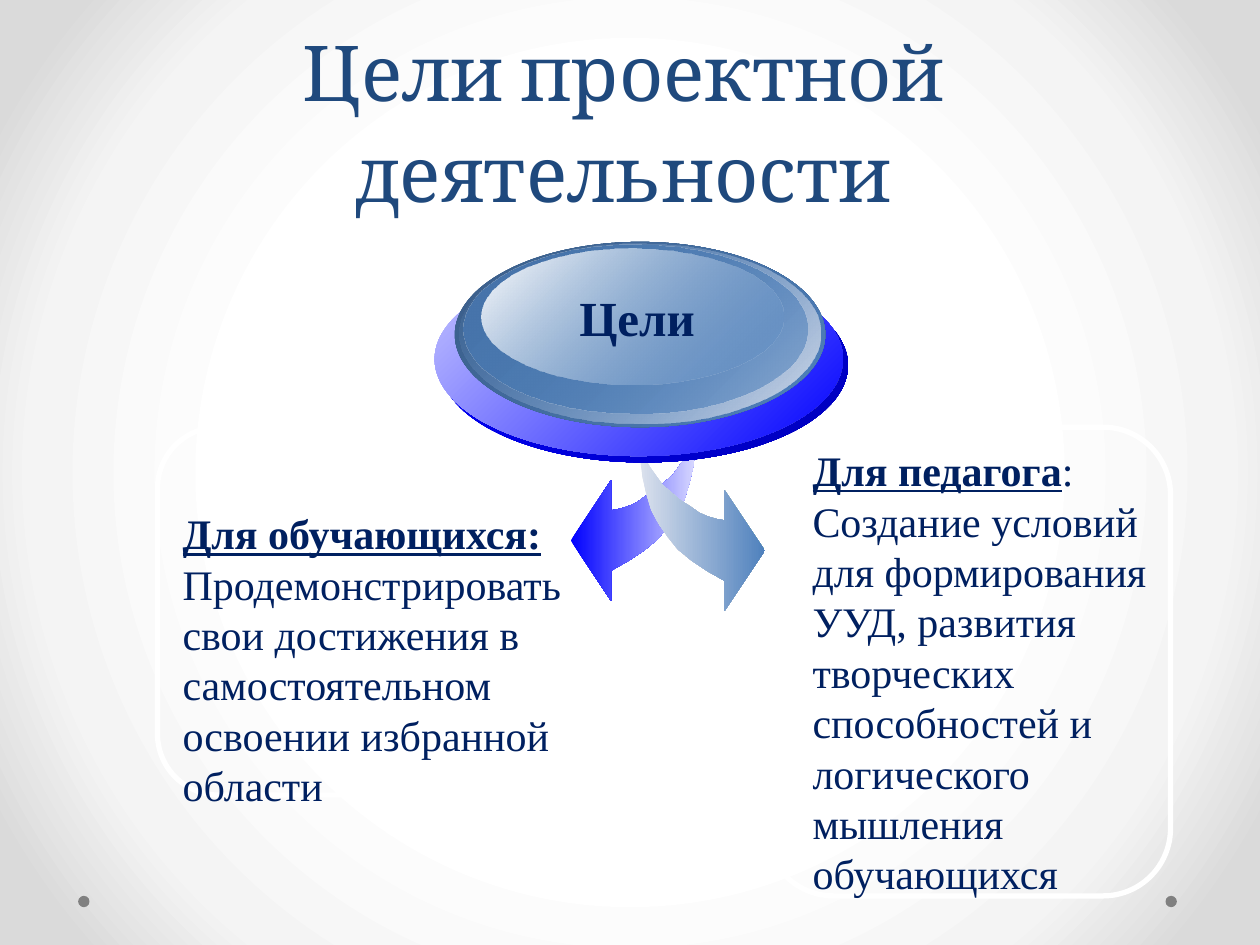
from lxml.etree import SubElement
from pptx import Presentation
from pptx.dml.color import RGBColor
from pptx.enum.shapes import MSO_SHAPE as Shape
from pptx.enum.text import MSO_ANCHOR as Anchor, MSO_AUTO_SIZE as AutoSize, PP_ALIGN as Align
from pptx.oxml import parse_xml
from pptx.oxml.ns import nsdecls, qn
from pptx.util import Inches, Pt

HEAD_FONT, BODY_FONT = "Cambria", "Times New Roman"
NAVY, STEEL, BLUE, WHITE = "002060", "4F81BD", "0000FF", "FFFFFF"

# Curved arrow pointing left, in hundredths of an inch
ARROW = [(552, 342), (552, 357), (550, 371), (547, 384), (543, 397), (537, 408),
         (530, 418), (522, 428), (511, 437), (499, 445), (485, 453), (485, 477),
         (453, 429), (485, 381), (485, 405), (491, 404), (498, 402), (505, 399),
         (512, 394), (520, 389), (527, 383), (534, 377), (539, 370), (544, 363),
         (548, 356), (551, 348)]
MIRROR_SUM, MIRROR_DROP = 1060, 8

# Layers of the button: box, then (colour, opacity) at both gradient ends
BUTTON = [
    ((3.49, 2.13, 3.24, 1.54), (BLUE, 100), ("0000BA", 100)),
    ((3.45, 2.08, 3.24, 1.54), ("C6C6FF", 100), (BLUE, 100)),
    ((3.61, 1.92, 2.94, 1.47), ("395C87", 100), (STEEL, 100)),
    ((3.65, 1.93, 2.86, 1.43), (STEEL, 0), ("D7DEEB", 100)),
    ((3.68, 1.94, 2.73, 1.34), ("4775AB", 100), (STEEL, 48)),
    ((3.82, 1.97, 2.40, 1.08), (WHITE, 100), (STEEL, 38)),
]


def color(value):
    return RGBColor.from_string(value)


def inches(box):
    return [Inches(length) for length in box]


class SlideBuilder:
    def __init__(self, page):
        self.page = page

    def background(self, stops):
        """Fill the page with a gradient that spreads from its centre."""
        marks = "".join(f'<a:gs pos="{place * 1000}"><a:srgbClr val="{value}"/></a:gs>'
                        for place, value in stops)
        self.page._element.cSld.insert(0, parse_xml(
            f'<p:bg {nsdecls("p", "a")}><p:bgPr><a:gradFill rotWithShape="1">'
            f'<a:gsLst>{marks}</a:gsLst><a:path path="circle">'
            '<a:fillToRect l="50000" t="50000" r="50000" b="50000"/></a:path>'
            '</a:gradFill><a:effectLst/></p:bgPr></p:bg>'))

    def gradient(self, shape, ends, angle=0):
        """Apply a linear gradient; the angle runs clockwise."""
        shape.shadow.inherit = False
        shape.line.fill.background()
        shape.fill.gradient()
        shape.fill.gradient_angle = 360 - angle
        for stop, (value, opacity) in zip(shape.fill.gradient_stops, ends):
            stop.color.rgb = color(value)
            if opacity < 100:
                alpha = SubElement(stop._gs.find(qn("a:srgbClr")), qn("a:alpha"))
                alpha.set("val", str(opacity * 1000))

    def title(self, text, box):
        title = self.page.shapes.title
        title.left, title.top, title.width, title.height = inches(box)
        frame = title.text_frame
        frame.text = text
        frame.word_wrap = True
        frame.auto_size = AutoSize.NONE
        frame.vertical_anchor = Anchor.BOTTOM
        para = frame.paragraphs[0]
        para.alignment = Align.CENTER
        para.line_spacing = Pt(58)
        self.style(para.font, 44, "1F497D", HEAD_FONT)

    def style(self, font, size, value, name=BODY_FONT):
        font.size, font.name = Pt(size), name
        font.color.rgb = color(value)

    def text(self, box, paragraphs, size=24, wrap=True):
        """Each paragraph is a list of (text, bold, underline) spans."""
        frame = self.page.shapes.add_textbox(*inches(box)).text_frame
        frame.word_wrap = wrap
        frame.auto_size = AutoSize.SHAPE_TO_FIT_TEXT
        for index, spans in enumerate(paragraphs):
            para = frame.add_paragraph() if index else frame.paragraphs[0]
            self.style(para.font, size, NAVY)
            for words, bold, underline in spans:
                span = para.add_run()
                span.text = words
                span.font.bold, span.font.underline = bold, underline

    def dot(self, left):
        dot = self.page.shapes.add_shape(Shape.OVAL, *inches((left, 7.11, 0.09, 0.09)))
        dot.shadow.inherit = False
        dot.fill.solid()
        dot.fill.fore_color.rgb = color("808080")
        dot.line.fill.background()

    def frame(self, box):
        frame = self.page.shapes.add_shape(Shape.ROUNDED_RECTANGLE, *inches(box))
        frame.shadow.inherit = False
        frame.fill.background()
        frame.line.color.rgb = color(WHITE)
        frame.line.width = Pt(3)

    def arrow(self, points, start, end):
        outline = self.page.shapes.build_freeform(*points[0], scale=Inches(0.01))
        outline.add_line_segments(points[1:], close=True)
        self.gradient(outline.convert_to_shape(), [(start, 100), (end, 100)])

    def button(self, layers):
        group = self.page.shapes.add_group_shape()
        for box, *ends in layers:
            self.gradient(group.shapes.add_shape(Shape.OVAL, *inches(box)), ends, 45)


def main():
    deck = Presentation()
    deck.slide_width, deck.slide_height = Inches(10), Inches(7.5)
    slide = SlideBuilder(deck.slides.add_slide(deck.slide_layouts[5]))

    slide.background([(50, WHITE), (76, "F4F4F4"), (92, "DADADA")])
    for left in (9.25, 0.62):
        slide.dot(left)
    slide.title("Цели проектной деятельности", (0.7, 0.53, 8.5, 1.25))

    slide.frame((6.08, 3.39, 3.21, 3.72))
    slide.frame((1.25, 3.39, 3.44, 2.92))
    slide.text((1.35, 3.98, 3.49, 2.52), [
        [("Для обучающихся:", True, True)],
        [("Продемонстрировать свои достижения в самостоятельном "
          "освоении избранной области", False, False)],
    ])

    slide.arrow(ARROW, BLUE, "D8D8FF")
    mirrored = [(MIRROR_SUM - x, y + MIRROR_DROP) for x, y in ARROW]
    slide.arrow(mirrored, "DBE1ED", STEEL)
    slide.button(BUTTON)
    slide.text((4.5, 2.23, 1.13, 0.57), [[("Цели", True, False)]], size=28, wrap=False)

    slide.text((6.35, 3.48, 3.18, 3.74), [
        [("Для педагога", True, True), (":", False, False)],
        [("Создание условий для формирования УУД, развития творческих "
          "способностей и логического мышления обучающихся", False, False)],
    ])
    deck.save("out.pptx")


if __name__ == "__main__":
    main()
